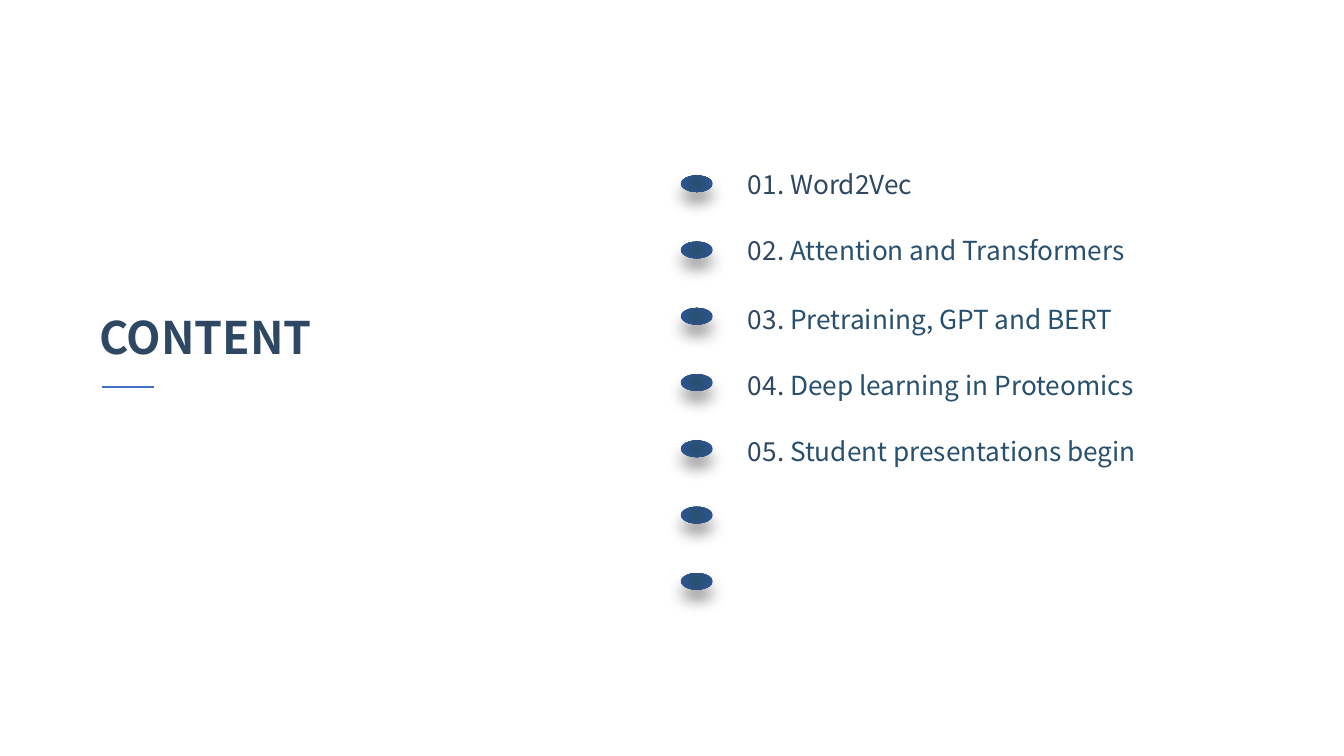
from lxml import etree
from pptx import Presentation
from pptx.dml.color import RGBColor
from pptx.enum.shapes import MSO_CONNECTOR, MSO_SHAPE
from pptx.enum.text import MSO_AUTO_SIZE, PP_ALIGN
from pptx.oxml import parse_xml
from pptx.oxml.ns import nsdecls, qn
from pptx.util import Cm, Pt

NAVY = RGBColor(0x2E, 0x48, 0x64)
TEAL = RGBColor(0x27, 0x50, 0x6E)
BLUE = RGBColor(0x2F, 0x55, 0x97)
ACCENT = RGBColor(0x44, 0x72, 0xC4)
FONT = "Noto Sans CJK SC"
OVAL = MSO_SHAPE.OVAL
STRAIGHT = MSO_CONNECTOR.STRAIGHT
GROW = MSO_AUTO_SIZE.SHAPE_TO_FIT_TEXT
LEFT = PP_ALIGN.LEFT
CENTER = PP_ALIGN.CENTER

RADIAL = (
    f'<a:path {nsdecls("a")} path="circle">'
    '<a:fillToRect l="50000" t="50000" r="50000" b="50000"/></a:path>'
)
SOFT_SHADOW = (
    f'<a:outerShdw {nsdecls("a")} blurRad="{Pt(11)}" dist="{Pt(8)}" dir="5400000" '
    'algn="t" rotWithShape="0"><a:srgbClr val="000000"><a:alpha val="40000"/>'
    '</a:srgbClr></a:outerShdw>'
)

prs = Presentation()
prs.slide_width = Cm(33.87)
prs.slide_height = Cm(19.05)
slide = prs.slides.add_slide(prs.slide_layouts[6])


def add_text(runs, left, top, width, height, size, bold=False, align=LEFT):
    frame = slide.shapes.add_textbox(Cm(left), Cm(top), Cm(width), Cm(height)).text_frame
    frame.word_wrap = False
    frame.auto_size = GROW
    paragraph = frame.paragraphs[0]
    paragraph.alignment = align
    for words, color in runs:
        run = paragraph.add_run()
        run.text = words
        run.font.name = FONT
        run.font.size = Pt(size)
        run.font.bold = bold
        run.font.color.rgb = color
        east_asian = etree.SubElement(run.font._element, qn("a:ea"))
        east_asian.set("typeface", FONT)


add_text([("CONTENT", NAVY)], 2.08, 7.67, 6.2, 1.63, size=32, bold=True, align=CENTER)

underline = slide.shapes.add_connector(STRAIGHT, Cm(2.57), Cm(9.75), Cm(3.89), Cm(9.75))
underline.line.color.rgb = ACCENT
underline.line.width = Pt(1.5)
etree.SubElement(underline._element.spPr, qn("a:effectLst"))

ROW_PITCH = 1.67
for row in range(7):
    bullet = slide.shapes.add_shape(
        OVAL, Cm(17.16), Cm(4.42 + row * ROW_PITCH), Cm(0.8), Cm(0.42))
    bullet.line.fill.background()
    bullet.fill.gradient()
    for stop, color in zip(bullet.fill.gradient_stops, (TEAL, BLUE)):
        stop.color.rgb = color
    direction = bullet._element.spPr.find(".//" + qn("a:lin"))
    direction.getparent().replace(direction, parse_xml(RADIAL))
    bullet.shadow.inherit = False
    bullet._element.spPr.find(qn("a:effectLst")).append(parse_xml(SOFT_SHADOW))

topics = [
    ("Word2Vec", NAVY, 4.11, 4.67),
    ("Attention and Transformers", TEAL, 5.79, 10.39),
    ("Pretraining, GPT and BERT", TEAL, 7.52, 9.98),
    ("Deep learning in Proteomics", TEAL, 9.18, 10.87),
    ("Student presentations begin", TEAL, 10.85, 10.82),
]
for number, (topic, color, top, width) in enumerate(topics, start=1):
    add_text([(f"{number:02}. ", NAVY), (topic, color)], 18.6, top, width, 1.07, size=18.7)

prs.save("out.pptx")
